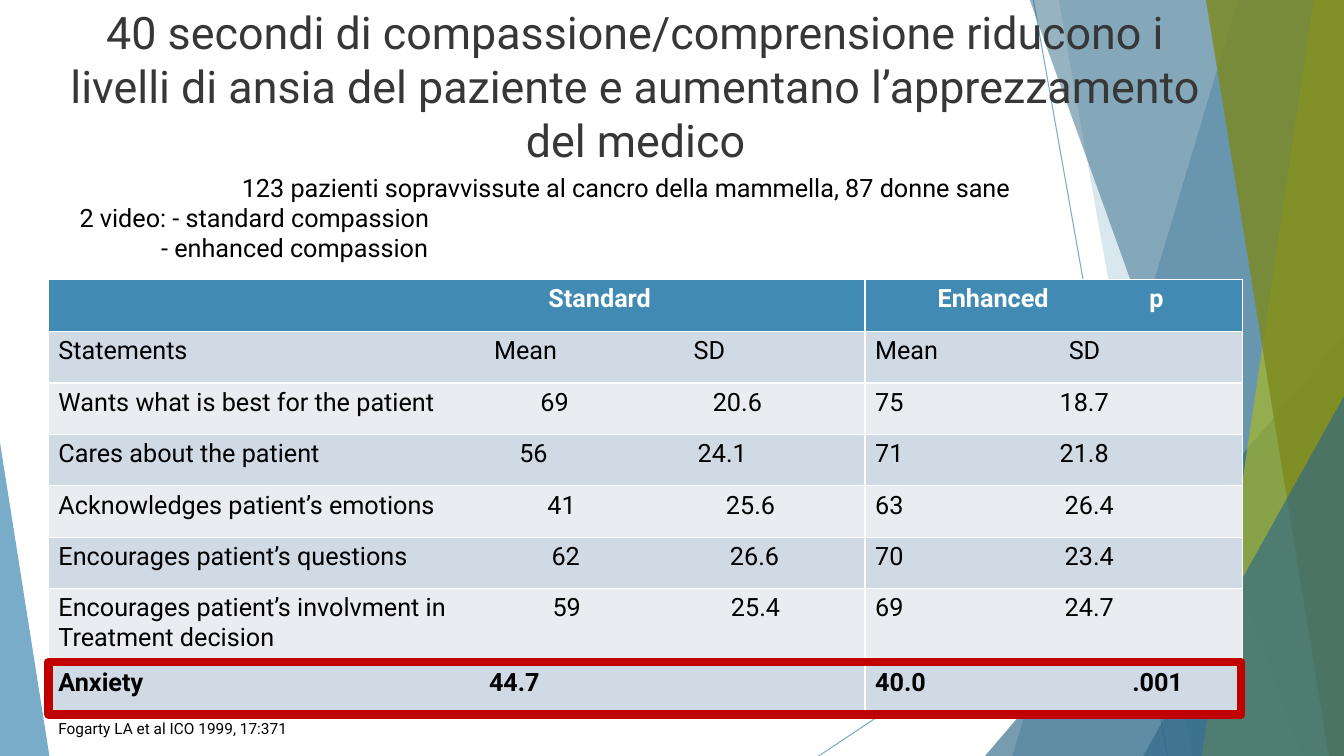
from lxml import etree
from pptx import Presentation
from pptx.dml.color import RGBColor
from pptx.enum import shapes, text
from pptx.oxml import ns
from pptx.util import Inches, Pt

BLUE = RGBColor(0x41, 0x8A, 0xB3)
DARK_BLUE = RGBColor(0x31, 0x68, 0x86)
LIME = RGBColor(0xA6, 0xB7, 0x27)
OLIVE = RGBColor(0x7D, 0x89, 0x1D)
RED = RGBColor(0xC0, 0x00, 0x00)
BAND_DARK = RGBColor(0xCF, 0xDA, 0xE5)
BAND_LIGHT = RGBColor(0xE9, 0xED, 0xF2)
TITLE_GREY = RGBColor(0x37, 0x37, 0x37)
BLACK = RGBColor(0, 0, 0)
WHITE = RGBColor(0xFF, 0xFF, 0xFF)

WIDTH, HEIGHT, TOP = 13.33, 7.5, -0.01

# Each row: left text, its tab stops, right text, its tab stops (inches)
RATINGS = [
    ("\tStandard", [4.86], "\tEnhanced\tp", [0.62, 2.72]),
    ("Statements\tMean\tSD", [4.32, 6.3], "Mean\tSD", [1.92]),
    ("Wants what is best for the patient\t69\t20.6", [4.78, 6.49], "75\t18.7", [1.83]),
    ("Cares about the patient\t56\t24.1", [4.57, 6.34], "71\t21.8", [1.83]),
    ("Acknowledges patient’s emotions\t41\t25.6", [4.85, 6.62], "63\t26.4", [1.88]),
    ("Encourages patient’s questions\t62\t26.6", [4.89, 6.66], "70\t23.4", [1.88]),
    ("Encourages patient’s involvment in\t59\t25.4\nTreatment decision",
     [4.9, 6.67], "69\t24.7", [1.88]),
    ("Anxiety\t44.7", [4.27], "40.0\t.001", [2.55]),
]


class SlideBuilder:
    def __init__(self, slide, font_name):
        self.slide = slide
        self.shapes = slide.shapes
        self.font_name = font_name

    def set_opacity(self, properties, percent):
        color = properties.find(".//" + ns.qn("a:srgbClr"))
        etree.SubElement(color, ns.qn("a:alpha"), val=str(percent * 1000))

    def set_text(self, frame, content, size, color, bold=False, tabs=(), align=None):
        frame.text = content
        for paragraph in frame.paragraphs:
            paragraph.alignment = align
            if tabs:
                properties = paragraph._p.get_or_add_pPr()
                stops = etree.SubElement(properties, ns.qn("a:tabLst"))
                for stop in tabs:
                    etree.SubElement(stops, ns.qn("a:tab"),
                                     pos=str(Inches(stop)), algn="l")
            for run in paragraph.runs:
                style = {"name": self.font_name, "size": Pt(size), "bold": bold}
                for attribute, value in style.items():
                    setattr(run.font, attribute, value)
                run.font.color.rgb = color

    def title(self, box, content):
        heading = self.shapes.title
        places = dict(zip(("left", "top", "width", "height"), map(Inches, box)))
        for attribute, value in places.items():
            setattr(heading, attribute, value)
        layout = {"word_wrap": True, "auto_size": text.MSO_AUTO_SIZE.NONE,
                  "vertical_anchor": text.MSO_ANCHOR.TOP}
        for attribute, value in layout.items():
            setattr(heading.text_frame, attribute, value)
        self.set_text(heading.text_frame, content, 32, TITLE_GREY,
                      align=text.PP_ALIGN.CENTER)
        # Bring the heading in front of the background shapes
        heading._element.getparent().append(heading._element)

    def text_box(self, box, content, size, tabs=()):
        frame = self.shapes.add_textbox(*map(Inches, box)).text_frame
        frame.word_wrap = True
        self.set_text(frame, content, size, BLACK, tabs=tabs)

    def hairline(self, start, end):
        line = self.shapes.add_connector(
            shapes.MSO_CONNECTOR.STRAIGHT, *map(Inches, start + end))
        line.line.color.rgb = BLUE
        line.line.width = Pt(0.75)
        properties = line._element.spPr
        self.set_opacity(properties, 70)
        etree.SubElement(properties, ns.qn("a:effectLst"))

    def tint(self, shape, color, opacity):
        shape.shadow.inherit = False
        shape.fill.solid()
        shape.fill.fore_color.rgb = color
        shape.line.fill.background()
        self.set_opacity(shape._element.spPr, opacity)

    def side_band(self, top_left, bottom_left, color, opacity):
        """Fill from a slanted left edge to the right edge of the slide."""
        corners = [(top_left, TOP), (WIDTH, TOP), (WIDTH, HEIGHT), (bottom_left, HEIGHT)]
        points = [(Inches(x), Inches(y)) for x, y in corners]
        builder = self.shapes.build_freeform(*points[0])
        builder.add_line_segments(points[1:], close=True)
        self.tint(builder.convert_to_shape(), color, opacity)

    def corner_triangle(self, left, width, height, apex, color, opacity):
        triangle = self.shapes.add_shape(
            shapes.MSO_SHAPE.ISOSCELES_TRIANGLE,
            *map(Inches, (left, HEIGHT - height, width, height)))
        triangle.adjustments[0] = apex
        self.tint(triangle, color, opacity)

    def ratings_table(self, box, column_widths, row_heights):
        table = self.shapes.add_table(
            len(row_heights), len(column_widths), *map(Inches, box)).table
        for column, width in zip(table.columns, column_widths):
            column.width = Inches(width)
        for row, height in zip(table.rows, row_heights):
            row.height = Inches(height)
        last = len(RATINGS) - 1
        for index, (left, left_tabs, right, right_tabs) in enumerate(RATINGS):
            band = BLUE if index == 0 else BAND_DARK if index % 2 else BAND_LIGHT
            for column, (content, tabs) in enumerate(
                    [(left, left_tabs), (right, right_tabs)]):
                cell = table.cell(index, column)
                cell.fill.solid()
                cell.fill.fore_color.rgb = band
                self.set_text(cell.text_frame, content, 18, BLACK if index else WHITE,
                              bold=index in (0, last), tabs=tabs)

    def highlight(self, box):
        frame = self.shapes.add_shape(shapes.MSO_SHAPE.RECTANGLE, *map(Inches, box))
        frame.shadow.inherit = False
        frame.fill.background()
        frame.line.color.rgb = RED
        frame.line.width = Pt(6)


def main():
    presentation = Presentation()
    presentation.slide_width = Inches(WIDTH)
    presentation.slide_height = Inches(HEIGHT)
    title_only = presentation.slide_layouts[5]
    page = SlideBuilder(presentation.slides.add_slide(title_only), "Roboto")

    page.hairline((10.25, 0), (11.58, HEIGHT))
    page.hairline((WIDTH, 4.03), (8.12, HEIGHT))
    page.side_band(12.28, 10.04, BLUE, 36)
    page.side_band(10.5, 11.83, BLUE, 20)
    page.corner_triangle(9.77, 3.56, 4.17, 1, DARK_BLUE, 66)
    page.side_band(10.21, 12.91, DARK_BLUE, 50)
    page.side_band(13.03, 11.92, LIME, 70)
    page.side_band(11.96, 13.18, OLIVE, 80)
    page.corner_triangle(11.34, 1.99, 3.57, 1, DARK_BLUE, 66)
    page.corner_triangle(0, 0.49, 3.11, 0, BLUE, 70)

    page.title((0.48, 0, 11.65, 1.63),
               "40 secondi di compassione/comprensione riducono i livelli di ansia "
               "del paziente e aumentano l’apprezzamento del medico")
    page.ratings_table((0.48, 2.77, 11.84, 4.31), [8.1, 3.74],
                       [0.52] + [0.51] * 5 + [0.74, 0.51])
    page.text_box((0.48, 7.08, 9.59, 0.29), "Fogarty LA et al ICO 1999, 17:371", 11)
    page.text_box((0.69, 1.66, 10.69, 1.31),
                  "\t\t123 pazienti sopravvissute al cancro della mammella, 87 donne sane\n"
                  "2 video: - standard compassion\n"
                  "\t- enhanced compassion", 18, tabs=[0.81, 1.61])
    page.highlight((0.48, 6.57, 11.83, 0.52))

    presentation.save("out.pptx")


if __name__ == "__main__":
    main()
